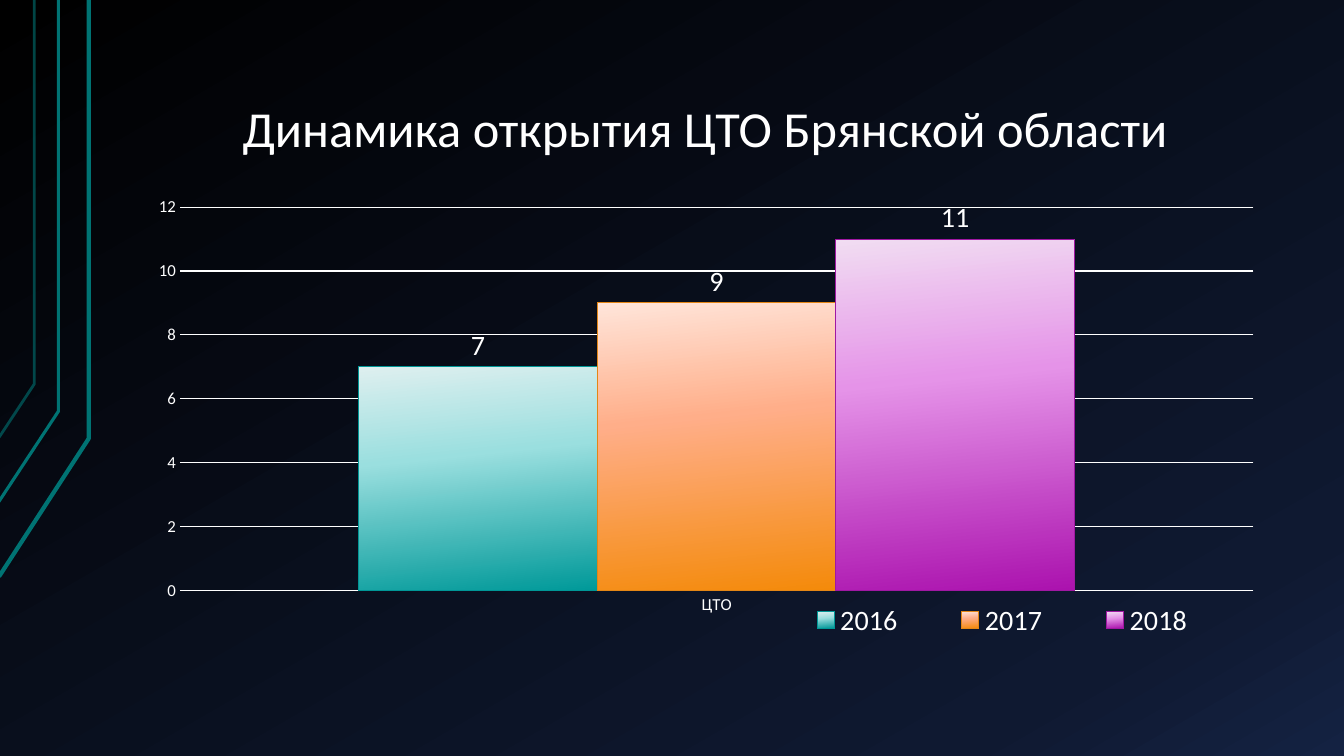
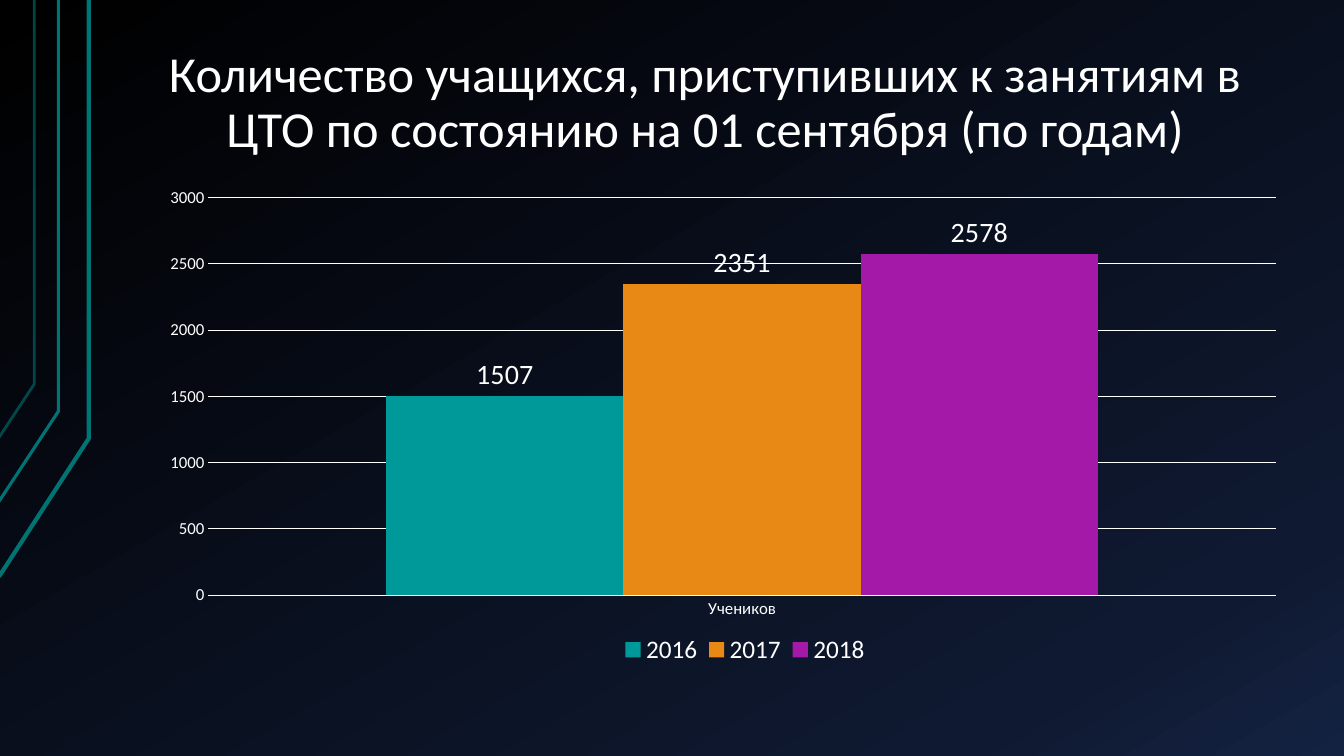
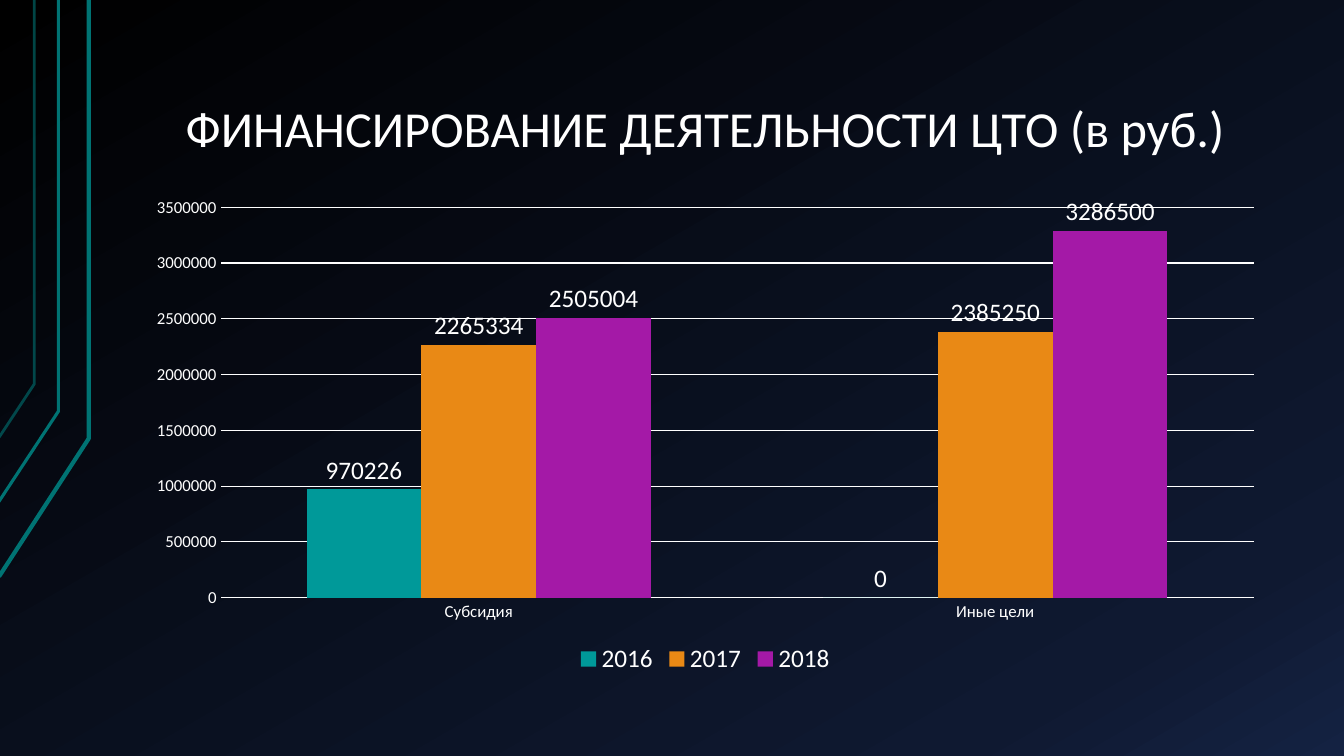
from copy import deepcopy

from lxml import etree
from pptx import Presentation
from pptx.chart.data import CategoryChartData
from pptx.dml.color import RGBColor
from pptx.enum.chart import (XL_CHART_TYPE, XL_LABEL_POSITION,
                             XL_LEGEND_POSITION, XL_TICK_MARK)
from pptx.enum.text import MSO_ANCHOR, MSO_AUTO_SIZE, PP_ALIGN
from pptx.oxml.ns import qn
from pptx.util import Inches, Pt

COLUMNS = XL_CHART_TYPE.COLUMN_CLUSTERED
OUTSIDE = XL_LABEL_POSITION.OUTSIDE_END
BOTTOM = XL_LEGEND_POSITION.BOTTOM
NO_TICK = XL_TICK_MARK.NONE

# Colours
WHITE = RGBColor(0xFF, 0xFF, 0xFF)
LINE_TEAL = RGBColor(0x00, 0x73, 0x73)
TEAL = RGBColor(0x00, 0x99, 0x99)
ORANGE = RGBColor(0xE9, 0x89, 0x15)
PURPLE = RGBColor(0xA4, 0x19, 0xA7)
EDGES = [RGBColor(0x00, 0x96, 0x96), RGBColor(0xE4, 0x86, 0x15),
         RGBColor(0xA0, 0x18, 0xA3)]
SOLIDS = [TEAL, ORANGE, PURPLE]

# Gradients: (position in percent, colour)
NIGHT = [(0, RGBColor(0x00, 0x00, 0x00)), (85, RGBColor(0x0F, 0x19, 0x31)),
         (100, RGBColor(0x14, 0x22, 0x42))]
BAR_STOPS = (0, 40, 100)
BAR_GRADIENTS = [
    list(zip(BAR_STOPS, shades)) for shades in (
        (RGBColor(0xDE, 0xEF, 0xEF), RGBColor(0x9A, 0xDF, 0xDF), TEAL),
        (RGBColor(0xFF, 0xE5, 0xDA), RGBColor(0xFF, 0xAE, 0x89),
         RGBColor(0xF4, 0x8A, 0x0A)),
        (RGBColor(0xF1, 0xDD, 0xF2), RGBColor(0xE5, 0x93, 0xE8),
         RGBColor(0xAB, 0x12, 0xAE)))]

# Corner lines: points, width, opacity in percent
CORNER_LINES = [
    ([(-0.01, 5.72), (0.88, 4.35), (0.88, 0)], 3, 100),
    ([(-0.02, 4.99), (0.58, 4.08), (0.58, 0)], 2.25, 100),
    ([(-0.01, 4.34), (0.34, 3.81), (0.34, 0)], 2, 60),
]

FONT = "Calibri"
YEARS = ("2016", "2017", "2018")
LEFT, WIDTH = Inches(1.33), Inches(11.33)


def set_gradient(fill, stops, angle):
    """Fill with a clockwise linear gradient of three stops."""
    fill.gradient()
    fill.gradient_angle = 360 - angle
    gs_list = fill._xPr.find(qn("a:gradFill")).find(qn("a:gsLst"))
    gs_list.append(deepcopy(gs_list[0]))
    for stop, (position, color) in zip(fill.gradient_stops, stops):
        stop.position = position / 100
        stop.color.rgb = color


def set_layout(element, box, inner=False):
    """Place a plot area or legend by fractions of the chart."""
    layout = element.find(qn("c:layout"))
    if layout is None:
        layout = etree.Element(qn("c:layout"))
        position = element.find(qn("c:legendPos"))
        if position is None:
            element.insert(0, layout)
        else:
            position.addnext(layout)
    manual = etree.SubElement(layout, qn("c:manualLayout"))
    values = [("layoutTarget", "inner")] if inner else []
    values += [("xMode", "edge"), ("yMode", "edge")]
    values += zip("xywh", box)
    for name, value in values:
        etree.SubElement(manual, qn("c:" + name)).set("val", str(value))


class Deck:
    def __init__(self):
        self.prs = Presentation()
        self.prs.slide_width = Inches(13.33)
        self.prs.slide_height = Inches(7.5)
        set_gradient(self.prs.slide_master.background.fill, NIGHT, 60)

    def font(self, font, size):
        for name, value in {"name": FONT, "size": Pt(size),
                            "bold": False}.items():
            setattr(font, name, value)
        font.color.rgb = WHITE

    def slide(self, title):
        self.s = self.prs.slides.add_slide(self.prs.slide_layouts[5])
        for points, width, opacity in CORNER_LINES:
            self.corner_line(points, width, opacity)
        self.title(title)

    def corner_line(self, points, width, opacity):
        start, *rest = [(Inches(x), Inches(y)) for x, y in points]
        builder = self.s.shapes.build_freeform(*start)
        builder.add_line_segments(rest, close=False)
        sp = builder.convert_to_shape()
        sp.shadow.inherit = False
        sp.fill.background()
        sp.line.color.rgb = LINE_TEAL
        sp.line.width = Pt(width)
        if opacity < 100:
            color = sp.line._ln.find(".//" + qn("a:srgbClr"))
            etree.SubElement(color, qn("a:alpha")).set(
                "val", str(opacity * 1000))

    def title(self, text):
        sp = self.s.shapes.title
        sp.left, sp.top, sp.width, sp.height = (
            LEFT, Inches(0.3), WIDTH, Inches(1.34))
        tf = sp.text_frame
        for name, value in {
                "word_wrap": True, "auto_size": MSO_AUTO_SIZE.NONE,
                "vertical_anchor": MSO_ANCHOR.BOTTOM,
                "margin_left": Inches(0.13), "margin_right": Inches(0.13),
                "margin_top": Inches(0.07),
                "margin_bottom": Inches(0.07)}.items():
            setattr(tf, name, value)
        p = tf.paragraphs[0]
        p.alignment = PP_ALIGN.CENTER
        p.line_spacing = 0.9
        r = p.add_run()
        r.text = text
        self.font(r.font, 36)

    def chart(self, categories, rows, top_value, step, label_size=20,
              legend_size=18, shaded=False, plot_box=None, legend_box=None):
        data = CategoryChartData()
        data.categories = categories
        for year, values in zip(YEARS, rows):
            data.add_series(year, values)
        chart = self.s.shapes.add_chart(
            COLUMNS, LEFT, Inches(1.86), WIDTH, Inches(4.88), data).chart
        chart.has_title = False
        self.font(chart.font, 10)

        # Axes
        for axis in (chart.category_axis, chart.value_axis):
            axis.major_tick_mark = axis.minor_tick_mark = NO_TICK
            axis.format.line.fill.background()
            self.font(axis.tick_labels.font, 12)
        axis = chart.value_axis
        axis.minimum_scale, axis.maximum_scale = 0, top_value
        axis.major_unit = step
        axis.has_major_gridlines = True
        grid = axis.major_gridlines.format.line
        grid.color.rgb = WHITE
        grid.width = Pt(0.75)

        # Legend
        chart.has_legend = True
        chart.legend.position = BOTTOM
        chart.legend.include_in_layout = False
        self.font(chart.legend.font, legend_size)

        # Columns and their labels
        plot = chart.plots[0]
        plot.gap_width, plot.overlap = 150, 0
        plot.vary_by_categories = False
        for i, series in enumerate(plot.series):
            series.invert_if_negative = False
            style = series.format
            if shaded:
                set_gradient(style.fill, BAR_GRADIENTS[i], 84)
                style.line.color.rgb = EDGES[i]
                style.line.width = Pt(0.75)
            else:
                style.fill.solid()
                style.fill.fore_color.rgb = SOLIDS[i]
            labels = series.data_labels
            labels.show_value = True
            labels.position = OUTSIDE
            self.font(labels.font, label_size)

        if plot_box:
            plot_area = chart._chartSpace.find(".//" + qn("c:plotArea"))
            set_layout(plot_area, plot_box, inner=True)
        if legend_box:
            set_layout(chart.legend._element, legend_box)


def main():
    deck = Deck()

    # Centres opened
    deck.slide("Динамика открытия ЦТО Брянской области")
    deck.chart(["ЦТО"], [[7], [9], [11]], 12, 2, legend_size=20, shaded=True,
               plot_box=(0.04, 0.04, 0.94, 0.78),
               legend_box=(0.55, 0.84, 0.42, 0.08))

    # Pupils
    deck.slide("Количество учащихся, приступивших к занятиям в ЦТО "
               "по состоянию на 01 сентября (по годам)")
    deck.chart(["Учеников"], [[1507], [2351], [2578]], 3000, 500,
               plot_box=(0.065, 0.021, 0.935, 0.808),
               legend_box=(0.42, 0.9, 0.23, 0.08))

    # Funding
    deck.slide("ФИНАНСИРОВАНИЕ ДЕЯТЕЛЬНОСТИ ЦТО (в руб.)")
    deck.chart(["Субсидия", "Иные цели"],
               [[970226, 0], [2265334, 2385250], [2505004, 3286500]],
               3500000, 500000, label_size=18)

    deck.prs.save("out.pptx")


if __name__ == "__main__":
    main()
